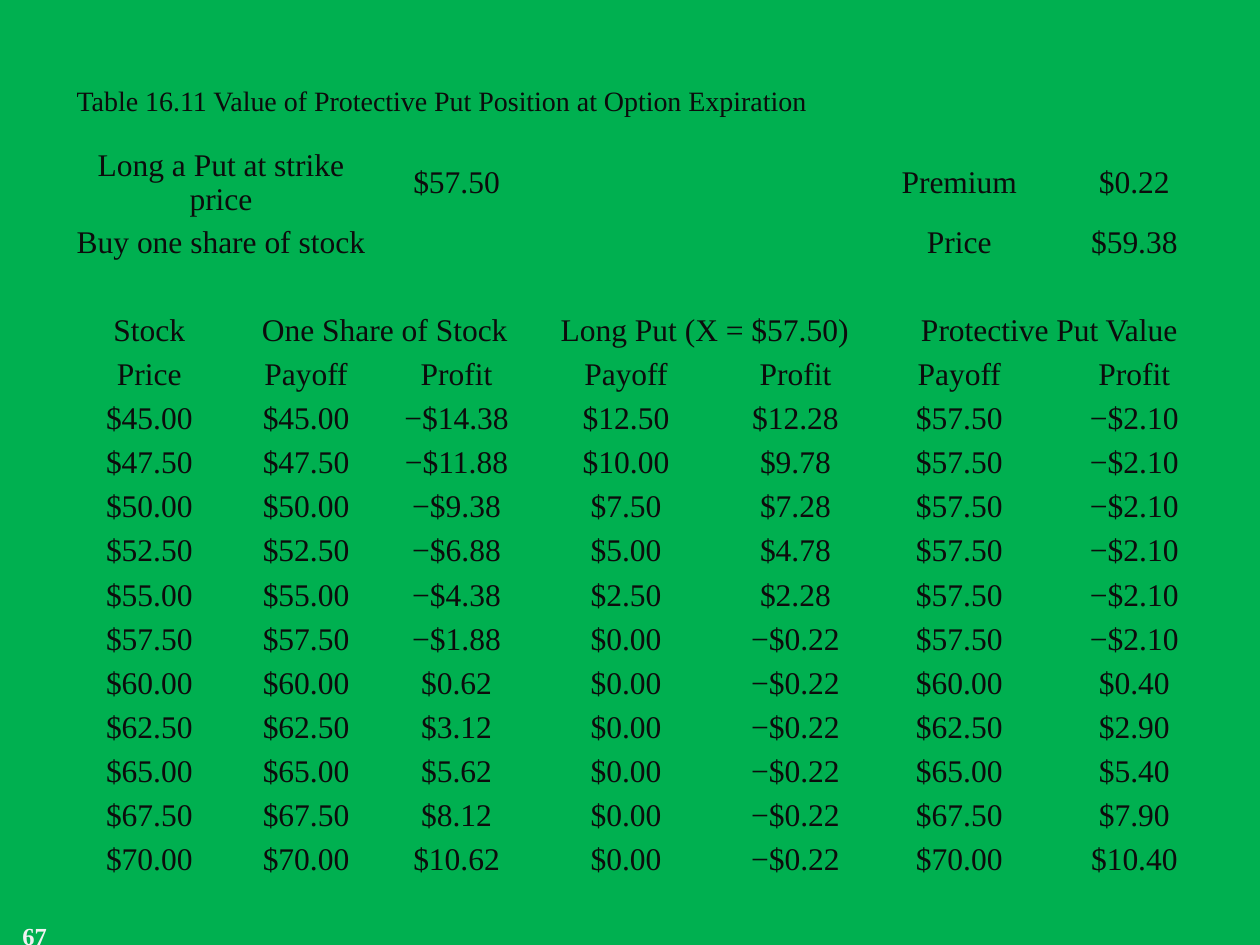
from typing import NamedTuple

from pptx import Presentation
from pptx import util as u
from pptx.dml.color import RGBColor
from pptx.enum import text

COLORS = {"background": "00B050", "body": "0C0C0C", "number": "F2F2F2"}
FONT = "Times New Roman"
NO_GRID_STYLE = "{2D5ABB26-0587-4C30-8999-92F81FD0307C}"
COLUMN_WIDTHS = [1.35, 0.96, 0.14, 1.25, 1.44, 1.25, 1.35, 1.25, 0.14]
ROW_COUNT = 16
ROW_HEIGHT = 0.35
STRIKE, PREMIUM, PURCHASE = 57.50, 0.22, 59.38
STOCK_PRICES = [45 + 2.5 * step for step in range(11)]


class Entry(NamedTuple):
    column: int
    span: int
    wording: str


class Label(NamedTuple):
    left: float
    top: float
    width: float
    height: float
    wording: str
    size: int
    color: str
    bold: bool
    anchor: text.MSO_ANCHOR


LABELS = [
    Label(0.51, 0.6, 8.5, 0.39,
          "Table 16.11 Value of Protective Put Position at Option Expiration",
          16, "body", False, text.MSO_ANCHOR.MIDDLE),
    Label(0.08, 7.26, 2.33, 0.4, "67", 14, "number", True, text.MSO_ANCHOR.TOP),
]


def money(amount: float) -> str:
    sign = "−" if amount < 0 else ""
    return f"{sign}${abs(amount):.2f}"


def seven_columns(wordings: list[str]) -> list[Entry]:
    slots = [(0, 1), (1, 2), (3, 1), (4, 1), (5, 1), (6, 1), (7, 2)]
    return [Entry(*slot, wording) for slot, wording in zip(slots, wordings)]


def outcome(price: float) -> list[Entry]:
    put = max(STRIKE - price, 0)
    protected = price + put
    amounts = [price, price, price - PURCHASE, put, put - PREMIUM,
               protected, protected - PURCHASE - PREMIUM]
    return seven_columns([money(amount) for amount in amounts])


def table_rows() -> list[list[Entry]]:
    return [
        [Entry(0, 3, "Long a Put at strike price"), Entry(3, 1, money(STRIKE)),
         Entry(6, 1, "Premium"), Entry(7, 2, money(PREMIUM))],
        [Entry(0, 3, "Buy one share of stock"),
         Entry(6, 1, "Price"), Entry(7, 2, money(PURCHASE))],
        [Entry(2, 2, "")],
        [Entry(0, 1, "Stock"), Entry(1, 3, "One Share of Stock"),
         Entry(4, 2, "Long Put (X = $57.50)"), Entry(6, 3, "Protective Put Value")],
        seven_columns(["Price"] + ["Payoff", "Profit"] * 3),
        *[outcome(price) for price in STOCK_PRICES],
    ]


def style(paragraph, size: int, color: str, bold: bool = False) -> None:
    font = paragraph.font
    font.name = FONT
    font.size = u.Pt(size)
    font.bold = bold
    font.color.rgb = RGBColor.from_string(COLORS[color])


def draw_label(slide, label: Label) -> None:
    box = slide.shapes.add_textbox(u.Inches(label.left), u.Inches(label.top),
                                   u.Inches(label.width), u.Inches(label.height))
    frame = box.text_frame
    frame.word_wrap = True
    frame.vertical_anchor = label.anchor
    frame.text = label.wording
    style(frame.paragraphs[0], label.size, label.color, label.bold)


def draw_table(slide, rows: list[list[Entry]]) -> None:
    table = slide.shapes.add_table(
        ROW_COUNT, len(COLUMN_WIDTHS), u.Inches(0.51), u.Inches(1.15),
        u.Inches(sum(COLUMN_WIDTHS)), u.Inches(ROW_COUNT * ROW_HEIGHT)).table
    table.first_row = False
    table.horz_banding = False
    table._tbl.tblPr[0].text = NO_GRID_STYLE
    for column, width in zip(table.columns, COLUMN_WIDTHS):
        column.width = u.Inches(width)
    for row in table.rows:
        row.height = u.Inches(ROW_HEIGHT)
    for cell in table.iter_cells():
        cell.fill.background()
        cell.vertical_anchor = text.MSO_ANCHOR.MIDDLE
        cell.margin_left = cell.margin_right = u.Inches(0.07)
        cell.margin_top = cell.margin_bottom = u.Inches(0)
    for index, entries in enumerate(rows):
        for entry in entries:
            cell = table.cell(index, entry.column)
            if entry.span > 1:
                cell.merge(table.cell(index, entry.column + entry.span - 1))
            cell.text = entry.wording
            paragraph = cell.text_frame.paragraphs[0]
            paragraph.alignment = text.PP_ALIGN.CENTER
            style(paragraph, 18, "body")


def main() -> None:
    deck = Presentation()
    deck.slide_width = u.Inches(10)
    deck.slide_height = u.Inches(7.5)
    slide = deck.slides.add_slide(deck.slide_layouts[6])
    backdrop = slide.background.fill
    backdrop.solid()
    backdrop.fore_color.rgb = RGBColor.from_string(COLORS["background"])
    title, number = LABELS
    draw_label(slide, title)
    draw_table(slide, table_rows())
    draw_label(slide, number)
    deck.save("out.pptx")


if __name__ == "__main__":
    main()
